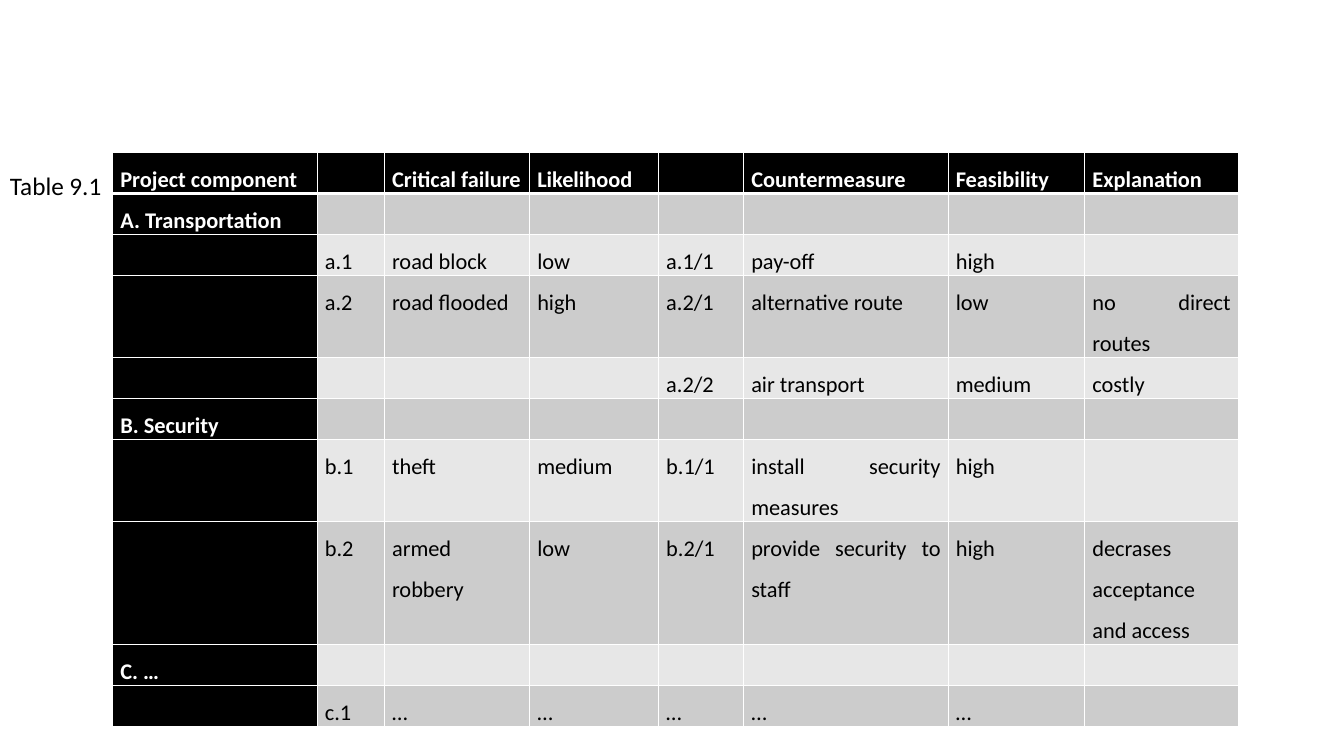
from dataclasses import dataclass

from lxml.etree import SubElement
from pptx import Presentation
from pptx.dml.color import RGBColor
from pptx.enum.text import MSO_AUTO_SIZE, PP_ALIGN
from pptx.oxml.ns import qn
from pptx.util import Pt

FONT = "Calibri"
COLORS = {"white": "FFFFFF", "black": "000000", "dark": "CCCCCC", "light": "E7E7E7"}
WIDTHS = [146.1, 48, 103.7, 92.1, 60.8, 146.1, 97.6, 109.6]
LINE = 29.28  # height of one text line in the table


@dataclass
class Row:
    texts: list[str]
    lines: int = 1


ROWS = [
    Row(["Project component", "", "Critical failure", "Likelihood", "",
         "Countermeasure", "Feasibility", "Explanation"]),
    Row(["A. Transportation"]),
    Row(["", "a.1", "road block", "low", "a.1/1", "pay-off", "high"]),
    Row(["", "a.2", "road flooded", "high", "a.2/1", "alternative route", "low",
         "no direct routes"], 2),
    Row(["", "", "", "", "a.2/2", "air transport", "medium", "costly"]),
    Row(["B. Security"]),
    Row(["", "b.1", "theft", "medium", "b.1/1", "install security measures", "high"], 2),
    Row(["", "b.2", "armed robbery", "low", "b.2/1", "provide security to staff", "high",
         "decrases acceptance and access"], 3),
    Row(["C. …"]),
    Row(["", "c.1", "…", "…", "…", "…", "…"]),
]


def style(run, size: float, color: str, bold: bool = False) -> None:
    font = run.font
    font.name, font.size, font.bold = FONT, Pt(size), bold
    font.color.rgb = RGBColor.from_string(COLORS[color])


def add_label(slide) -> None:
    box = slide.shapes.add_textbox(Pt(0), Pt(118.1), Pt(80.6), Pt(29))
    frame = box.text_frame
    frame.text = "Table 9.1"
    frame.word_wrap = False
    frame.auto_size = MSO_AUTO_SIZE.SHAPE_TO_FIT_TEXT
    style(frame.paragraphs[0].runs[0], 18, "black")


def add_edges(cell, top: float, bottom: float) -> None:
    props = cell._tc.get_or_add_tcPr()
    edges = {"a:lnL": 1, "a:lnR": 1, "a:lnT": top, "a:lnB": bottom}
    for place, (tag, width) in enumerate(edges.items()):
        line = SubElement(props, qn(tag), w=str(Pt(width)))
        fill = SubElement(line, qn("a:solidFill"))
        SubElement(fill, qn("a:srgbClr"), val=COLORS["white"])
        props.insert(place, line)


def fill_cell(cell, text: str, row: int, col: int) -> None:
    head = row == 0 or col == 0
    cell.margin_left = cell.margin_right = Pt(5.4)
    cell.margin_top = cell.margin_bottom = Pt(0)
    shade = "black" if head else "dark" if row % 2 else "light"
    cell.fill.solid()
    cell.fill.fore_color.rgb = RGBColor.from_string(COLORS[shade])
    add_edges(cell, 3 if row == 1 else 1, 3 if row == 0 else 1)
    if text:
        cell.text_frame.text = text
        para = cell.text_frame.paragraphs[0]
        para.alignment = PP_ALIGN.JUSTIFY
        para.line_spacing = 1.5
        style(para.runs[0], 16, "white" if head else "black", head)


def add_grid(slide) -> None:
    height = LINE * sum(row.lines for row in ROWS)
    table = slide.shapes.add_table(len(ROWS), len(WIDTHS), Pt(80.6), Pt(109),
                                   Pt(sum(WIDTHS)), Pt(height)).table
    table.first_row = table.horz_banding = False
    for col, width in enumerate(WIDTHS):
        table.columns[col].width = Pt(width)
    for r, row in enumerate(ROWS):
        table.rows[r].height = Pt(LINE * row.lines)
        for c in range(len(WIDTHS)):
            text = row.texts[c] if c < len(row.texts) else ""
            fill_cell(table.cell(r, c), text, r, c)


def main() -> None:
    deck = Presentation()
    deck.slide_width, deck.slide_height = Pt(960), Pt(540)
    slide = deck.slides.add_slide(deck.slide_layouts[6])
    # Table number at the left
    add_label(slide)
    # Risk table
    add_grid(slide)
    deck.save("out.pptx")


if __name__ == "__main__":
    main()
